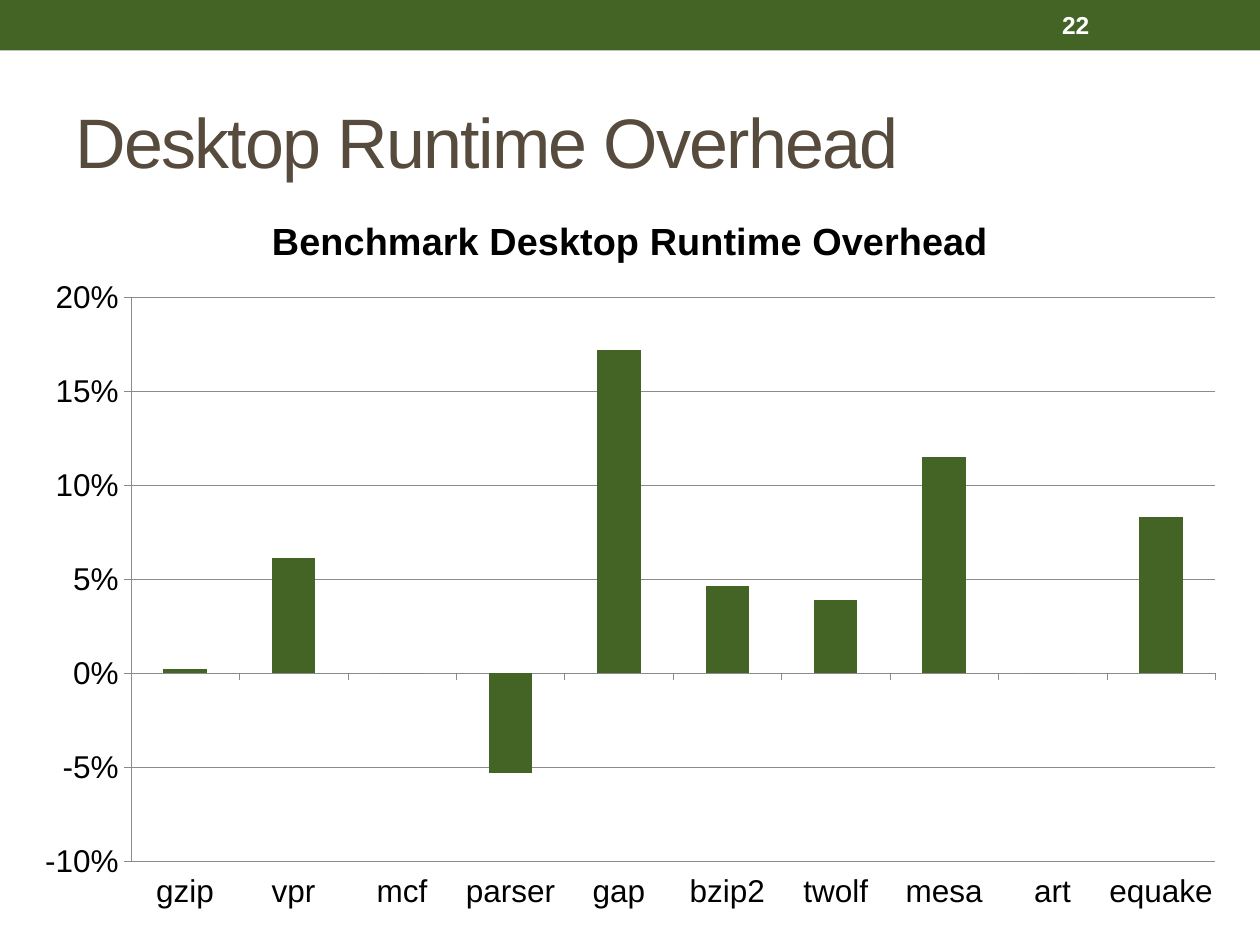
from lxml import etree
from pptx import Presentation
from pptx import util as u
from pptx.chart.data import CategoryChartData
from pptx.dml.color import RGBColor
from pptx.enum import chart as charts, shapes, text
from pptx.oxml.ns import qn

COLORS = {"green": "446426", "brown": "564B3C", "white": "FFFFFF",
          "black": "000000", "grey": "8B8B8B"}
FONT = "Arial"

presentation = Presentation()
presentation.slide_width = u.Cm(25.4)
presentation.slide_height = u.Cm(19.05)
slide = presentation.slides.add_slide(presentation.slide_layouts[6])


def color(name):
    return RGBColor.from_string(COLORS[name])


def add_text(words, left, top, width, height, size, font_color, bold=False, spacing=0):
    box = slide.shapes.add_textbox(u.Cm(left), u.Cm(top), u.Cm(width), u.Cm(height))
    frame = box.text_frame
    frame.word_wrap = True
    frame.vertical_anchor = text.MSO_ANCHOR.MIDDLE
    run = frame.paragraphs[0].add_run()
    run.text = words
    run.font.name = FONT
    run.font.size = u.Pt(size)
    run.font.bold = bold
    run.font.color.rgb = color(font_color)
    if spacing:
        run.font._element.set("spc", str(spacing * 100))


# Header band
band = slide.shapes.add_shape(shapes.MSO_SHAPE.RECTANGLE, 0, 0,
                              presentation.slide_width, u.Cm(1.02))
band.shadow.inherit = False
band.fill.solid()
band.fill.fore_color.rgb = color("green")
band.line.fill.background()

# Slide title
add_text("Desktop Runtime Overhead", 1.27, 1.47, 22.86, 2.74, 40, "brown", spacing=-1)

# Overhead chart
overhead = {"gzip": 0.002, "vpr": 0.061, "mcf": 0, "parser": -0.053, "gap": 0.172,
            "bzip2": 0.046, "twolf": 0.039, "mesa": 0.115, "art": 0, "equake": 0.083}
chart_data = CategoryChartData(number_format="0.00%")
chart_data.categories = list(overhead)
chart_data.add_series("Series 1", list(overhead.values()))
chart = slide.shapes.add_chart(charts.XL_CHART_TYPE.COLUMN_CLUSTERED, u.Cm(0.43), u.Cm(3.81),
                               u.Cm(24.56), u.Cm(14.81), chart_data).chart
chart.has_legend = False
chart.font.name = FONT
chart.font.size = u.Pt(18)
chart.font.color.rgb = color("black")

# Chart title
chart.has_title = True
chart.chart_title.include_in_layout = False
title_paragraph = chart.chart_title.text_frame.paragraphs[0]
title_run = title_paragraph.add_run()
title_run.text = "Benchmark Desktop Runtime Overhead"
title_run.font.name = FONT
title_run.font.size = u.Pt(21.6)
title_run.font.bold = True
title_run.font.color.rgb = color("black")

# Columns
plot = chart.plots[0]
plot.gap_width = 150
plot.vary_by_categories = False
series = plot.series[0]
series.invert_if_negative = False
series.format.fill.solid()
series.format.fill.fore_color.rgb = color("green")

# Axes and gridlines
value_axis, category_axis = chart.value_axis, chart.category_axis
value_axis.minimum_scale = -0.1
value_axis.maximum_scale = 0.2
value_axis.major_unit = 0.05
value_axis.has_major_gridlines = True
value_axis.tick_labels.number_format = "0%"
value_axis.tick_labels.number_format_is_linked = False
category_axis.tick_label_position = charts.XL_TICK_LABEL_POSITION.LOW
for axis in (value_axis, category_axis):
    axis.major_tick_mark = charts.XL_TICK_MARK.OUTSIDE
    axis.minor_tick_mark = charts.XL_TICK_MARK.NONE
for lined in (value_axis, category_axis, value_axis.major_gridlines):
    lined.format.line.color.rgb = color("grey")
    lined.format.line.width = u.Pt(0.25)

# Fixed position of the plot inside the chart, as fractions of its size
plot_area = chart._chartSpace.chart.plotArea
for old_layout in plot_area.findall(qn("c:layout")):
    plot_area.remove(old_layout)
layout = etree.Element(qn("c:layout"))
plot_area.insert(0, layout)
manual = etree.SubElement(layout, qn("c:manualLayout"))
for tag, value in (("layoutTarget", "inner"), ("xMode", "edge"), ("yMode", "edge"),
                   ("x", "0.09"), ("y", "0.147"), ("w", "0.89"), ("h", "0.768")):
    etree.SubElement(manual, qn("c:" + tag)).set("val", value)

# Slide number
add_text("22", 21.16, 0.05, 2.97, 0.91, 14, "white", bold=True)

presentation.save("out.pptx")
